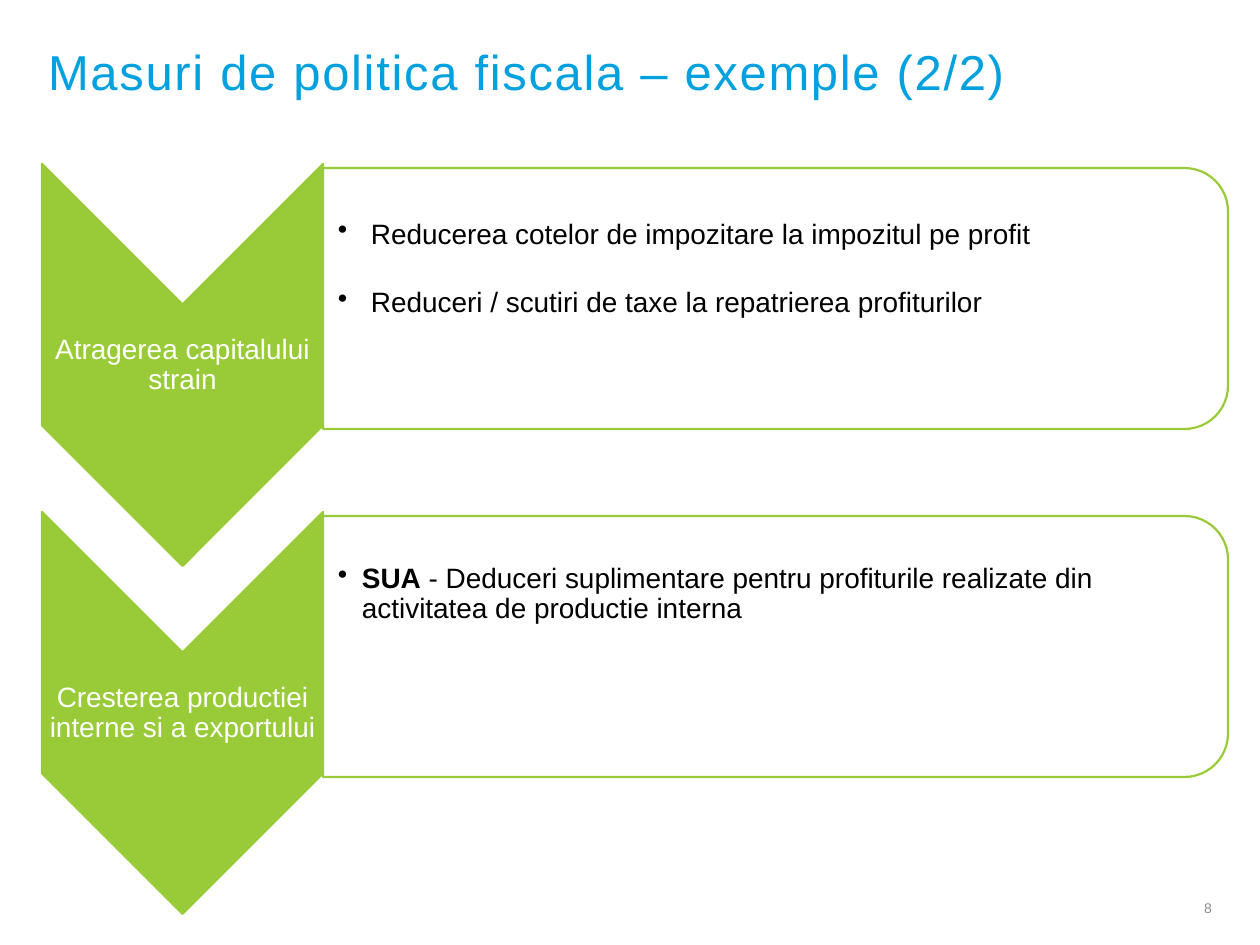
import pptx
import pptx.dml.color
import pptx.enum.shapes
import pptx.enum.text
import pptx.oxml.ns
import pptx.util
from lxml import etree

PX = 914400 / 126  # EMU in one px
COLORS = {"green": "99CB38", "blue": "00A1DE", "white": "FFFFFF",
          "black": "000000", "grey": "8C8C8C"}
ALIGN = pptx.enum.text.PP_ALIGN
ANCHOR = pptx.enum.text.MSO_ANCHOR
SHAPE = pptx.enum.shapes.MSO_SHAPE


def emu(px):
    return pptx.util.Emu(round(px * PX))


def color(name):
    return pptx.dml.color.RGBColor.from_string(COLORS[name])


def add_text(para, text, size=16, fill="black", bold=False, tracking=None):
    span = para.add_run()
    span.text = text
    span.font.name = "Arial"
    span.font.size = pptx.util.Pt(size)
    span.font.bold = bold
    span.font.color.rgb = color(fill)
    if tracking:
        span.font._element.set("spc", str(tracking * 100))


class Page:
    def __init__(self, deck):
        self.slide = deck.slides.add_slide(deck.slide_layouts[5])

    def place(self, box, left, top, width, height):
        box.left, box.top = emu(left), emu(top)
        box.width, box.height = emu(width), emu(height)

    def frame(self, box, anchor, insets):
        frame = box.text_frame
        frame.word_wrap = True
        frame.auto_size = pptx.enum.text.MSO_AUTO_SIZE.NONE
        frame.vertical_anchor = anchor
        (frame.margin_left, frame.margin_top,
         frame.margin_right, frame.margin_bottom) = map(emu, insets)
        return frame

    def title(self, text, left, top, width, height):
        box = self.slide.shapes.title
        self.place(box, left, top, width, height)
        para = self.frame(box, ANCHOR.TOP, (6, 6, 6, 6)).paragraphs[0]
        para.alignment = ALIGN.LEFT
        para.line_spacing = 0.9
        add_text(para, text, size=28, fill="blue", tracking=1)

    def turned_shape(self, kind, left, top, width, height, fill):
        """Add a shape turned by 90 degrees that covers the given area."""
        shift = (width - height) / 2
        shape = self.slide.shapes.add_shape(
            kind, emu(left + shift), emu(top - shift), emu(height), emu(width))
        shape.rotation = 90
        shape.shadow.inherit = False
        shape.fill.solid()
        shape.fill.fore_color.rgb = color(fill)
        shape.line.color.rgb = color("green")
        shape.line.width = pptx.util.Pt(1.25)

    def label(self, text, left, top, width, height, align=ALIGN.CENTER,
              spacing=0.9, inset=1, **style):
        box = self.slide.shapes.add_textbox(0, 0, 0, 0)
        self.place(box, left, top, width, height)
        para = self.frame(box, ANCHOR.MIDDLE, (inset,) * 4).paragraphs[0]
        para.alignment = align
        para.line_spacing = spacing
        add_text(para, text, **style)

    def bullets(self, items, left, top, width, height, indent, spacing):
        """Add bulleted items, each a list of (text, bold) spans."""
        box = self.slide.shapes.add_textbox(0, 0, 0, 0)
        self.place(box, left, top, width, height)
        frame = self.frame(box, ANCHOR.TOP, (15, 36, 1, 1))
        for number, item in enumerate(items):
            para = frame.add_paragraph() if number else frame.paragraphs[0]
            para.line_spacing = spacing
            para.space_before = pptx.util.Pt(20 if number else 0)
            props = para._p.get_or_add_pPr()
            props.set("marL", str(emu(indent)))
            props.set("indent", str(-emu(indent)))
            bullet = etree.SubElement(props, pptx.oxml.ns.qn("a:buChar"))
            bullet.set("char", "•")
            for text, bold in item:
                add_text(para, text, bold=bold)


def main():
    deck = pptx.Presentation()
    deck.slide_width, deck.slide_height = emu(1260), emu(945)
    page = Page(deck)
    page.title("Masuri de politica fiscala – exemple (2/2)", 42, 42, 1218, 126)

    # Rows: chevron label, bulleted items, bullet indent, line spacing
    rows = [
        ("Atragerea capitalului strain",
         [[("Reducerea cotelor de impozitare la impozitul pe profit", False)],
          [("Reduceri / scutiri de taxe la repatrierea profiturilor", False)]],
         33, 1.0),
        ("Cresterea productiei interne si a exportului",
         [[("SUA", True),
           (" - Deduceri suplimentare pentru profiturile realizate din "
            "activitatea de productie interna", False)]],
         24, 0.9),
    ]
    for number, (name, items, indent, spacing) in enumerate(rows):
        top = 164 + 348 * number
        page.turned_shape(SHAPE.CHEVRON, 42, top, 281, 402, "green")
        page.label(name, 42, top + 141, 281, 121, fill="white")
        page.turned_shape(SHAPE.ROUND_2_SAME_RECTANGLE,
                          323, top + 4, 905, 261, "white")
        page.bullets(items, 323, top + 16, 892, 236, indent, spacing)

    # Page number
    page.label("8", 1102, 890, 110, 35, align=ALIGN.RIGHT, spacing=1.0,
               inset=0, size=8, fill="grey")
    deck.save("out.pptx")


if __name__ == "__main__":
    main()
